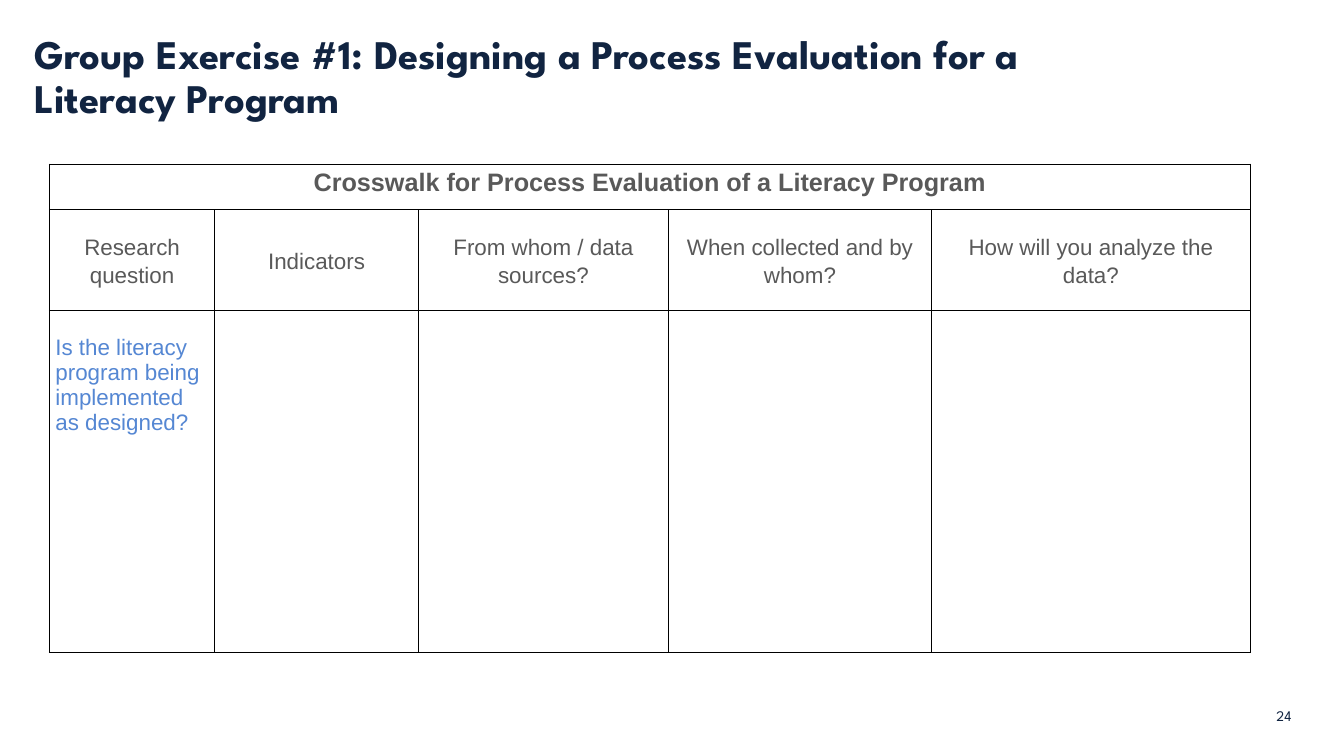
"""Build the literacy program crosswalk slide."""
from dataclasses import dataclass

from lxml import etree
from pptx import Presentation
from pptx.dml.color import RGBColor
from pptx.enum.text import MSO_ANCHOR, PP_ALIGN
from pptx.oxml.ns import qn
from pptx.slide import Slide
from pptx.table import Table, _Cell
from pptx.text.text import TextFrame
from pptx.util import Inches, Pt

TOP, MIDDLE, BOTTOM = MSO_ANCHOR.TOP, MSO_ANCHOR.MIDDLE, MSO_ANCHOR.BOTTOM
LEFT, CENTER = PP_ALIGN.LEFT, PP_ALIGN.CENTER

NAVY, GRAY, BLUE, BLACK = "112441", "595959", "5587D3", "000000"
COLUMN_WIDTHS = (1.64, 2.02, 2.48, 2.61, 3.16)
ROW_HEIGHTS = (0.45, 1, 3.39)
HEADINGS = (
    "Research question",
    "Indicators",
    "From whom / data sources?",
    "When collected and by whom?",
    "How will you analyze the data?",
)


@dataclass(frozen=True)
class TextStyle:
    font: str
    size: float
    color: str
    bold: bool = False
    alignment: PP_ALIGN = LEFT
    anchor: MSO_ANCHOR = TOP
    line_spacing: float = 1.0


@dataclass(frozen=True)
class TextBox:
    text: str
    left: float
    top: float
    width: float
    height: float
    style: TextStyle
    margin_left: float = 0


@dataclass(frozen=True)
class CellText:
    row: int
    column: int
    text: str
    style: TextStyle
    margin_top: float = 0


CAPTION = TextStyle("Arial", 18, GRAY, True, CENTER, TOP, 1.15)
HEADING = TextStyle("Arial", 16, GRAY, False, CENTER, MIDDLE, 1.15)
QUESTION = TextStyle("Arial", 16, BLUE)

TEXT_BOXES = (
    TextBox("Group Exercise #1: Designing a Process Evaluation for a Literacy Program",
            0.34, 0.18, 9.84, 1.03,
            TextStyle("League Spartan", 29, NAVY, True, anchor=BOTTOM, line_spacing=0.9)),
    TextBox("24", 12.6, 7.02, 0.32, 0.15,
            TextStyle("League Spartan", 10.5, NAVY, anchor=MIDDLE), 0.06),
)
CELL_TEXTS = (
    CellText(0, 0, "Crosswalk for Process Evaluation of a Literacy Program", CAPTION),
    *(CellText(1, column, text, HEADING) for column, text in enumerate(HEADINGS)),
    CellText(2, 0, "Is the literacy program being implemented as designed?", QUESTION, 0.25),
)


def color(value: str) -> RGBColor:
    return RGBColor.from_string(value)


def write(text_frame: TextFrame, text: str, style: TextStyle) -> None:
    text_frame.text = text
    paragraph = text_frame.paragraphs[0]
    paragraph.alignment = style.alignment
    paragraph.line_spacing = style.line_spacing
    font = paragraph.runs[0].font
    font.name = style.font
    font.size = Pt(style.size)
    font.bold = style.bold
    font.color.rgb = color(style.color)


def add_text_box(slide: Slide, box: TextBox) -> None:
    shape = slide.shapes.add_textbox(
        Inches(box.left), Inches(box.top), Inches(box.width), Inches(box.height))
    text_frame = shape.text_frame
    text_frame.word_wrap = True
    text_frame.vertical_anchor = box.style.anchor
    text_frame.margin_left = Inches(box.margin_left)
    text_frame.margin_top = text_frame.margin_right = text_frame.margin_bottom = 0
    write(text_frame, box.text, box.style)


def format_cell(cell: _Cell) -> None:
    cell.margin_left = cell.margin_right = Inches(0.06)
    cell.margin_top = cell.margin_bottom = 0
    properties = cell._tc.get_or_add_tcPr()
    for side in ("a:lnL", "a:lnR", "a:lnT", "a:lnB"):
        border = etree.SubElement(properties, qn(side), w=str(Pt(1)))
        fill = etree.SubElement(border, qn("a:solidFill"))
        etree.SubElement(fill, qn("a:srgbClr"), val=BLACK)
    cell.fill.background()


def add_crosswalk(slide: Slide) -> Table:
    table = slide.shapes.add_table(
        len(ROW_HEIGHTS), len(COLUMN_WIDTHS), Inches(0.49), Inches(1.63),
        Inches(sum(COLUMN_WIDTHS)), Inches(sum(ROW_HEIGHTS))).table
    table.first_row = table.horz_banding = False
    for column, width in zip(table.columns, COLUMN_WIDTHS):
        column.width = Inches(width)
    for row, height in zip(table.rows, ROW_HEIGHTS):
        row.height = Inches(height)
    for cell in table.iter_cells():
        format_cell(cell)
    table.cell(0, 0).merge(table.cell(0, len(COLUMN_WIDTHS) - 1))
    for item in CELL_TEXTS:
        cell = table.cell(item.row, item.column)
        cell.vertical_anchor = item.style.anchor
        cell.margin_top = Inches(item.margin_top)
        write(cell.text_frame, item.text, item.style)
    return table


def main() -> None:
    presentation = Presentation()
    presentation.slide_width = Inches(13.33)
    presentation.slide_height = Inches(7.5)
    slide = presentation.slides.add_slide(presentation.slide_layouts[6])
    for box in TEXT_BOXES:
        add_text_box(slide, box)
    add_crosswalk(slide)
    presentation.save("out.pptx")


if __name__ == "__main__":
    main()
